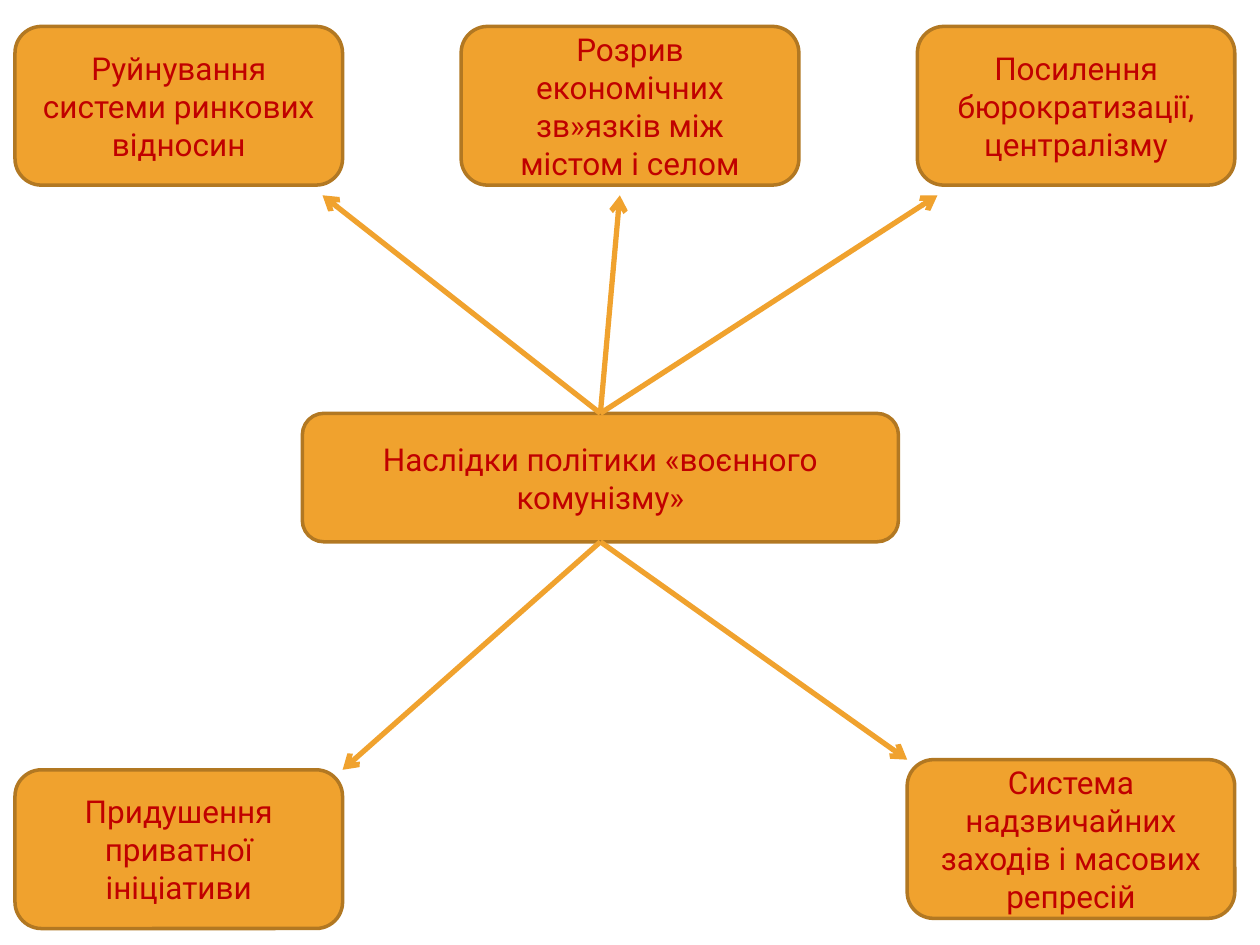
from dataclasses import dataclass

from pptx import Presentation
from pptx.dml.color import RGBColor as RGB
from pptx.enum.shapes import MSO_CONNECTOR as CONN, MSO_SHAPE as SHAPE
from pptx.enum.text import MSO_ANCHOR as ANCHOR, PP_ALIGN as ALIGN
from pptx.oxml.ns import qn
from pptx.util import Pt
from lxml.etree import SubElement


@dataclass(frozen=True)
class Theme:
    """Colours, type and line widths of the slide."""
    fill: RGB = RGB(0xF0, 0xA2, 0x2E)
    border: RGB = RGB(0xB2, 0x78, 0x22)
    text: RGB = RGB(0xC0, 0x00, 0x00)
    font: str = "Roboto"
    size: float = 18
    border_width: float = 2
    arrow_width: float = 3


THEME = Theme()
TOP, BOTTOM = 0, 2
TOP_Y, LOW_Y = 15.1, 439.9
BOX_H, TIP_GAP = 90.7, 5.8
TOPIC = ("Наслідки політики «воєнного комунізму»", (172.8, 236.2, 340.6, 73.4))
# Each: text, left, top, width, tip offset from the box corner, side of the topic
EFFECTS = [
    ("Руйнування системи ринкових відносин",
     8.6, TOP_Y, 187.2, (175.7, BOX_H + TIP_GAP), TOP),
    ("Розрив економічних зв»язків між містом і селом",
     263.5, TOP_Y, 193, (90.7, BOX_H + TIP_GAP), TOP),
    ("Посилення бюрократизації, централізму",
     524.2, TOP_Y, 181.4, (11.5, BOX_H + TIP_GAP), TOP),
    ("Придушення приватної ініціативи",
     8.6, LOW_Y, 187.2, (187.2, 0), BOTTOM),
    ("Система надзвичайних заходів і масових репресій",
     518.4, LOW_Y - TIP_GAP, 187.2, (0, 0), BOTTOM),
]


def add_box(slide, text, box):
    """Draw a rounded box with centred text and return it."""
    sp = slide.shapes.add_shape(SHAPE.ROUNDED_RECTANGLE, *map(Pt, box))
    sp.shadow.inherit = False
    sp.fill.solid()
    sp.fill.fore_color.rgb = THEME.fill
    sp.line.color.rgb = THEME.border
    sp.line.width = Pt(THEME.border_width)
    tf = sp.text_frame
    tf.word_wrap = True
    tf.vertical_anchor = ANCHOR.MIDDLE
    p = tf.paragraphs[0]
    p.text = text
    p.alignment = ALIGN.CENTER
    p.font.name = THEME.font
    p.font.size = Pt(THEME.size)
    p.font.color.rgb = THEME.text
    return sp


def add_arrow(slide, source, side, x, y):
    """Draw an arrow from one side of the source box to a point."""
    line = slide.shapes.add_connector(CONN.STRAIGHT, 0, 0, Pt(x), Pt(y))
    line.begin_connect(source, side)
    line.line.color.rgb = THEME.fill
    line.line.width = Pt(THEME.arrow_width)
    SubElement(line.line._get_or_add_ln(), qn("a:tailEnd"), type="arrow")
    SubElement(line._element.spPr, qn("a:effectLst"))


def add_effect(slide, topic, text, left, top, width, tip, side):
    """Draw one consequence box and the arrow that leads to it."""
    add_box(slide, text, (left, top, width, BOX_H))
    add_arrow(slide, topic, side, left + tip[0], top + tip[1])


def main():
    """Build the slide and save it."""
    prs = Presentation()
    prs.slide_width, prs.slide_height = Pt(720), Pt(540)
    slide = prs.slides.add_slide(prs.slide_layouts[6])
    topic = add_box(slide, *TOPIC)
    for effect in EFFECTS:
        add_effect(slide, topic, *effect)
    prs.save("out.pptx")


if __name__ == "__main__":
    main()
